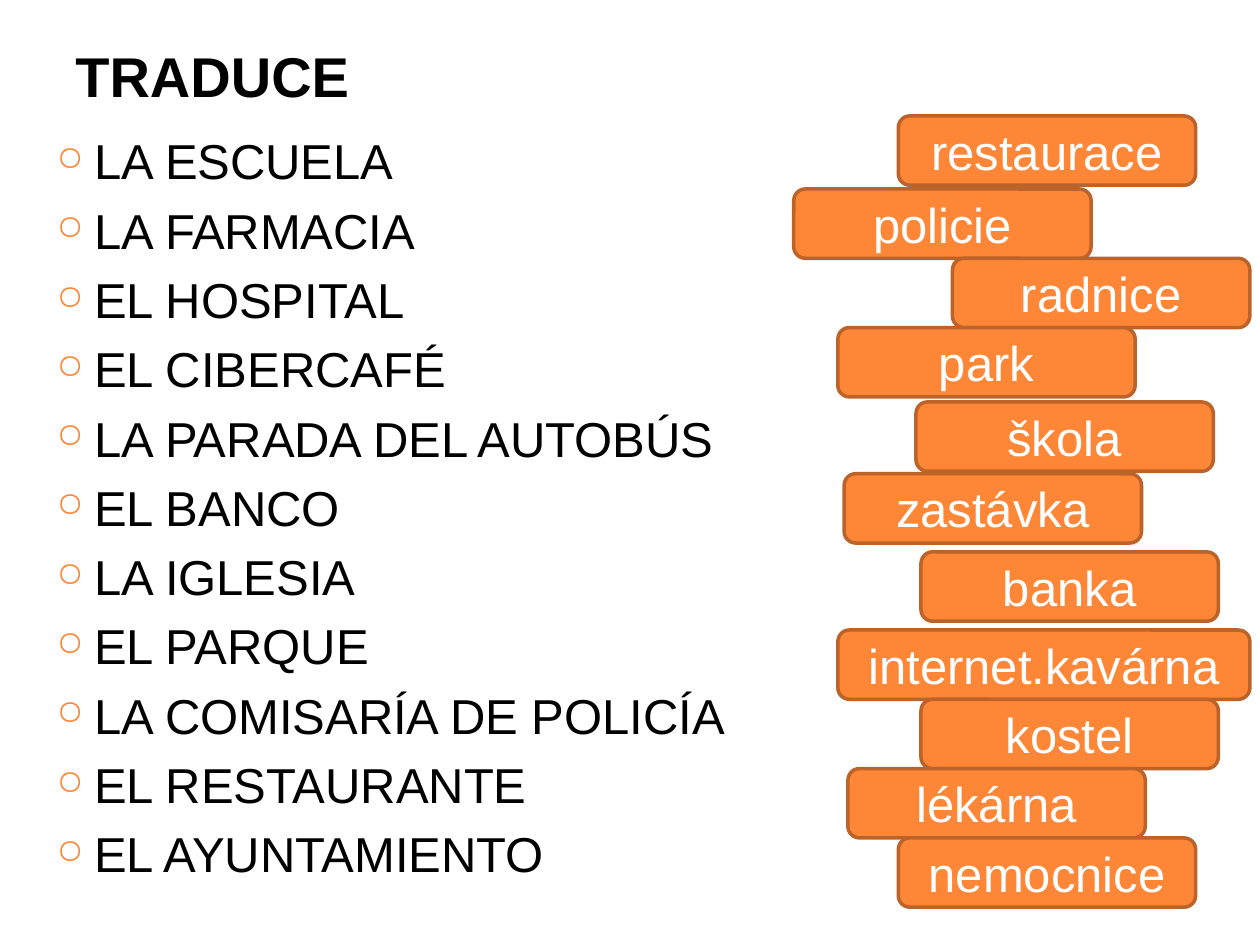
from lxml import etree
from pptx import Presentation
from pptx.dml.color import RGBColor
from pptx.enum.shapes import MSO_SHAPE
from pptx.enum.text import MSO_ANCHOR, PP_ALIGN
from pptx.oxml.ns import qn
from pptx.util import Inches, Pt

ROUND = MSO_SHAPE.ROUNDED_RECTANGLE
MIDDLE, BOTTOM = MSO_ANCHOR.MIDDLE, MSO_ANCHOR.BOTTOM
CENTER = PP_ALIGN.CENTER
COLORS = {"text": "000000", "card": "FE8637", "edge": "BC6329", "label": "FFFFFF"}

PLACES = [
    "LA ESCUELA", "LA FARMACIA", "EL HOSPITAL", "EL CIBERCAFÉ",
    "LA PARADA DEL AUTOBÚS", "EL BANCO", "LA IGLESIA", "EL PARQUE",
    "LA COMISARÍA DE POLICÍA", "EL RESTAURANTE", "EL AYUNTAMIENTO",
]
CARDS = [
    ("restaurace", 7.13, 0.92, 2.36),
    ("policie", 6.3, 1.5, 2.36),
    ("radnice", 7.56, 2.05, 2.36),
    ("park", 6.65, 2.6, 2.36),
    ("škola", 7.27, 3.19, 2.36),
    ("zastávka", 6.7, 3.76, 2.36),
    ("banka", 7.31, 4.38, 2.36),
    ("internet.kavárna", 6.65, 5, 3.27),
    ("kostel", 7.31, 5.55, 2.36),
    ("lékárna", 6.73, 6.1, 2.36),
    ("nemocnice", 7.13, 6.65, 2.36),
]


def color(name):
    return RGBColor.from_string(COLORS[name])


def write(para, text, size, name):
    para.text = text
    para.font.name = "Arial"
    para.font.size = Pt(size)
    para.font.color.rgb = color(name)


prs = Presentation()
prs.slide_width, prs.slide_height = Inches(10), Inches(7.5)
slide = prs.slides.add_slide(prs.slide_layouts[6])
shapes = slide.shapes

title = shapes.add_textbox(Inches(0.5), Inches(0.3), Inches(8.17), Inches(0.61))
frame = title.text_frame
frame.word_wrap = True
frame.vertical_anchor = BOTTOM
write(frame.paragraphs[0], "TRADUCE", 32, "text")
frame.paragraphs[0].font.bold = True

body = shapes.add_textbox(Inches(0.35), Inches(0.99), Inches(9.21), Inches(6.3))
frame = body.text_frame
frame.word_wrap = True
for i, place in enumerate(PLACES):
    para = frame.add_paragraph() if i else frame.paragraphs[0]
    write(para, place, 28, "text")
    para.space_before = Pt(6)
    para.line_spacing = Pt(33.6)
    props = para._p.get_or_add_pPr()
    props.set("marL", str(Inches(0.3)))
    props.set("indent", str(Inches(-0.3)))
    tint = etree.Element(qn("a:buClr"))
    etree.SubElement(tint, qn("a:srgbClr"), val=COLORS["card"])
    size = etree.Element(qn("a:buSzPct"), val="70000")
    mark = etree.Element(qn("a:buChar"), char="○")
    spot = props.index(props.find(qn("a:defRPr")))
    props[spot:spot] = [tint, size, mark]

for word, left, top, width in CARDS:
    card = shapes.add_shape(ROUND, Inches(left), Inches(top), Inches(width), Inches(0.55))
    card.shadow.inherit = False
    card.fill.solid()
    card.fill.fore_color.rgb = color("card")
    card.line.color.rgb = color("edge")
    card.line.width = Pt(2)
    frame = card.text_frame
    frame.word_wrap = True
    frame.vertical_anchor = MIDDLE
    write(frame.paragraphs[0], word, 28, "label")
    frame.paragraphs[0].alignment = CENTER

prs.save("out.pptx")
